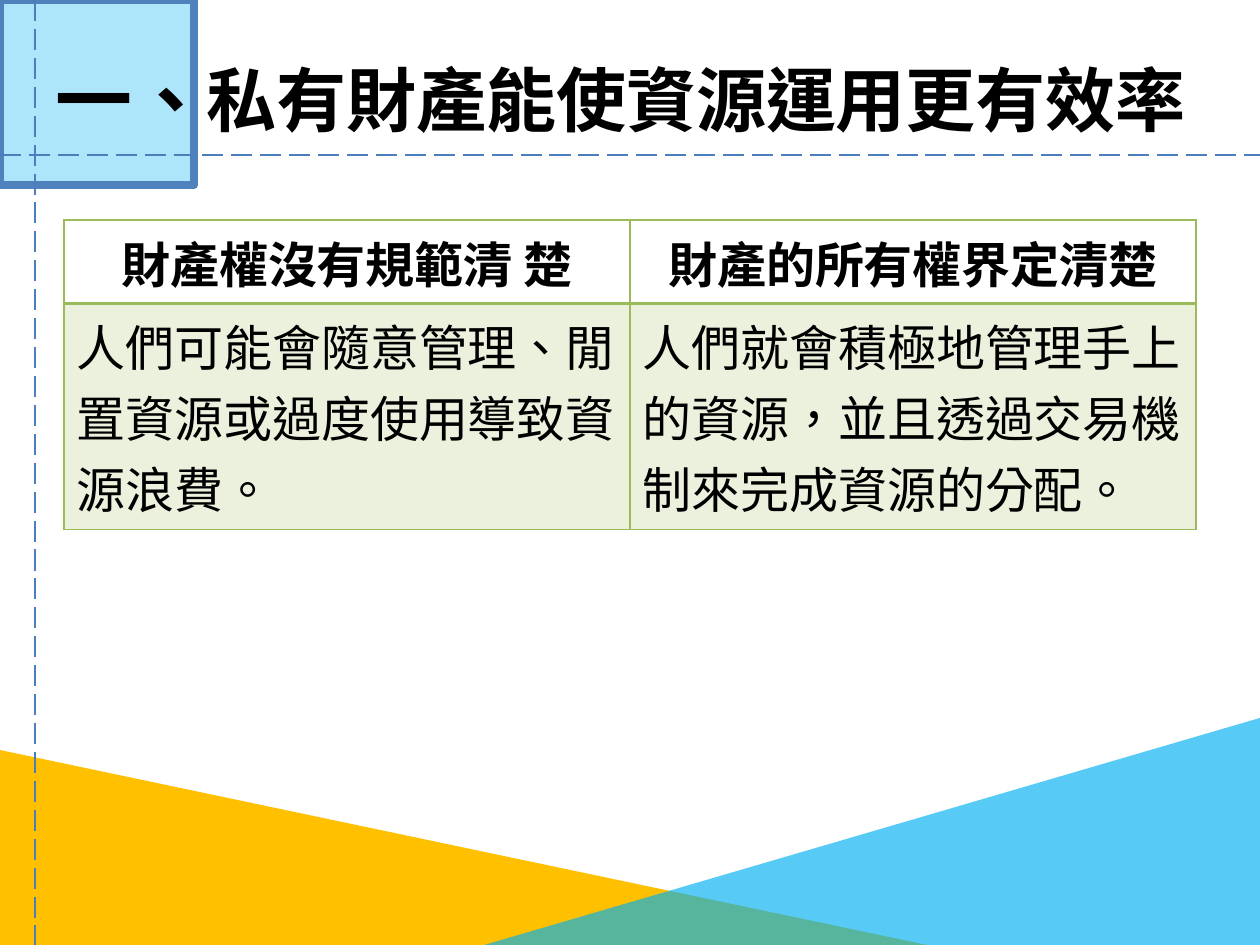
from lxml.etree import SubElement
from pptx import Presentation
from pptx.dml.color import RGBColor
from pptx.enum.dml import MSO_LINE
from pptx.enum.lang import MSO_LANGUAGE_ID as Lang
from pptx.enum.shapes import MSO_CONNECTOR as Connector, MSO_SHAPE as Shape
from pptx.enum.text import MSO_ANCHOR as Anchor, MSO_AUTO_SIZE as AutoSize, PP_ALIGN as Align
from pptx.oxml.ns import qn
from pptx.util import Emu, Pt

FONT = "Noto Sans CJK SC"
COLORS = {"text": "000000", "sky": "00B0F0", "gold": "FFC000",
          "frame": "4F81BD", "guide": "4B7EBC", "grid": "9BBB59"}
ROWS = [
    ["財產權沒有規範清 楚", "財產的所有權界定清楚"],
    ["人們可能會隨意管理、閒置資源或過度使用導致資源浪費。",
     "人們就會積極地管理手上的資源，並且透過交易機制來完成資源的分配。"],
]
ROW_HEIGHTS = [83, 226]


def px(count):
    """Turn pixels into EMU at 126 pixels to the inch."""
    return Emu(round(count * 914400 / 126))


def rgb(name):
    """Look up a palette colour."""
    return RGBColor.from_string(COLORS[name])


def paint(fill, color, opacity=100):
    """Give a fill a solid colour with an opacity in percent."""
    fill.solid()
    fill.fore_color.rgb = rgb(color)
    if opacity < 100:
        solid = fill._xPr.find(qn("a:solidFill"))
        SubElement(solid[0], qn("a:alpha"), val=str(opacity * 1000))


def write(frame, text, size, bold=True, align=Align.LEFT):
    """Write one paragraph of Traditional Chinese text."""
    frame.text = text
    paragraph = frame.paragraphs[0]
    paragraph.alignment = align
    font = paragraph.font
    font.name, font.size, font.bold = FONT, Pt(size), bold
    font.color.rgb = rgb("text")
    SubElement(font._rPr, qn("a:ea"), typeface=FONT)
    paragraph.runs[0].font.language_id = Lang.TRADITIONAL_CHINESE


def add_block(slide, preset, box, color, opacity=100, outline=None, flip=False):
    """Add a decorative preset shape."""
    block = slide.shapes.add_shape(preset, *map(px, box))
    block.shadow.inherit = False
    paint(block.fill, color, opacity)
    if outline:
        block.line.color.rgb = rgb(outline)
        block.line.width = Pt(4.5)
    else:
        block.line.fill.background()
    if flip:
        block.element.spPr.xfrm.set("flipH", "1")


def add_guide(slide, *ends):
    """Add a dashed guide line."""
    guide = slide.shapes.add_connector(Connector.STRAIGHT, *map(px, ends))
    guide.line.color.rgb = rgb("guide")
    guide.line.width = Pt(1.5)
    guide.line.dash_style = MSO_LINE.LONG_DASH
    SubElement(guide.element.spPr, qn("a:effectLst"))


def add_number(slide, text):
    """Add the section number beside the title."""
    number = slide.shapes.add_textbox(*map(px, (43, 45, 181, 106)))
    frame = number.text_frame
    frame.word_wrap = False
    frame.auto_size = AutoSize.SHAPE_TO_FIT_TEXT
    write(frame, text, 44)


def set_title(slide, text):
    """Place the title in front of the decoration."""
    title = slide.shapes.title
    title.left, title.top, title.width, title.height = map(px, (194, 20, 1052, 158))
    frame = title.text_frame
    frame.word_wrap = True
    frame.auto_size = AutoSize.NONE
    frame.vertical_anchor = Anchor.MIDDLE
    write(frame, text, 40)
    title.element.getparent().append(title.element)


def set_borders(cell, **widths):
    """Draw the cell borders, with widths in points by side."""
    properties = cell._tc.get_or_add_tcPr()
    for side in "LRTB":
        border = SubElement(properties, qn(f"a:ln{side}"), w=str(Pt(widths.get(side, 1))))
        solid = SubElement(border, qn("a:solidFill"))
        SubElement(solid, qn("a:srgbClr"), val=COLORS["grid"])


def add_comparison(slide):
    """Add the table comparing unclear and clear property rights."""
    frame = slide.shapes.add_table(2, 2, *map(px, (64, 220, 1132, sum(ROW_HEIGHTS))))
    table = frame.table
    table.first_row = table.horz_banding = False
    for row, height, texts in zip(table.rows, ROW_HEIGHTS, ROWS):
        row.height = px(height)
        header = texts is ROWS[0]
        for cell, text in zip(row.cells, texts):
            write(cell.text_frame, text, 28, header, Align.CENTER if header else Align.LEFT)
            if header:
                set_borders(cell, B=2)
                cell.fill.background()
            else:
                set_borders(cell, T=2)
                paint(cell.fill, "grid", 20)


def main():
    """Build the slide and save it."""
    deck = Presentation()
    deck.slide_width, deck.slide_height = px(1260), px(945)
    slide = deck.slides.add_slide(deck.slide_layouts[5])
    add_block(slide, Shape.RECTANGLE, (0, 0, 194, 185), "sky", 32, "frame")
    add_block(slide, Shape.RIGHT_TRIANGLE, (0, 750, 927, 195), "gold")
    add_block(slide, Shape.RIGHT_TRIANGLE, (481, 718, 779, 228), "sky", 66, flip=True)
    add_guide(slide, 35, 0, 35, 945)
    add_guide(slide, 0, 155, 1260, 155)
    add_number(slide, "一、")
    set_title(slide, "私有財產能使資源運用更有效率")
    add_comparison(slide)
    deck.save("out.pptx")


if __name__ == "__main__":
    main()
